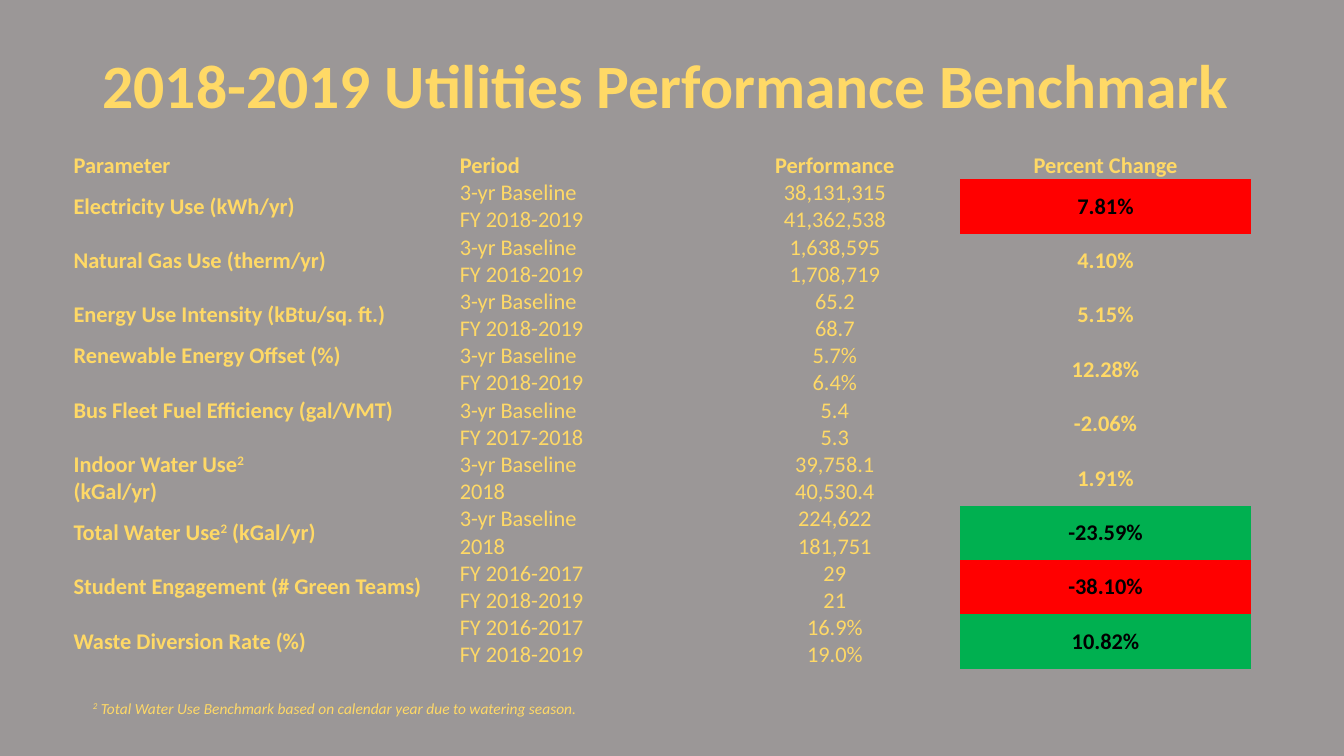
import pptx
import pptx.dml.color
import pptx.enum.text
import pptx.oxml.ns
import pptx.util

Inches = pptx.util.Inches
Pt = pptx.util.Pt
Color = pptx.dml.color.RGBColor
Align = pptx.enum.text.PP_ALIGN
Anchor = pptx.enum.text.MSO_ANCHOR

GRAY = Color(0x9B, 0x97, 0x97)
GOLD = Color(0xFF, 0xD9, 0x66)
BLACK = Color(0, 0, 0)
RED = Color(0xFF, 0, 0)
GREEN = Color(0, 0xB0, 0x50)

FACE = "Calibri"
PLAIN = "{2D5ABB26-0587-4C30-8999-92F81FD0307C}"
BASE = "3-yr Baseline"
FY17 = "FY 2016-2017"
FY18 = "FY 2017-2018"
FY19 = "FY 2018-2019"

HEADS = ["Parameter", "Period", "Performance", "Percent Change"]
ITEMS = [
    ("Electricity Use (kWh/yr)", BASE, "38,131,315", FY19, "41,362,538", "7.81%", RED),
    ("Natural Gas Use (therm/yr)", BASE, "1,638,595", FY19, "1,708,719", "4.10%", None),
    ("Energy Use Intensity (kBtu/sq. ft.)", BASE, "65.2", FY19, "68.7", "5.15%", None),
    ("Renewable Energy Offset (%)", BASE, "5.7%", FY19, "6.4%", "12.28%", None),
    ("Bus Fleet Fuel Efficiency (gal/VMT)", BASE, "5.4", FY18, "5.3", "-2.06%", None),
    ("Indoor Water Use^2^\v(kGal/yr)", BASE, "39,758.1", "2018", "40,530.4", "1.91%", None),
    ("Total Water Use^2^ (kGal/yr)", BASE, "224,622", "2018", "181,751", "-23.59%", GREEN),
    ("Student Engagement (# Green Teams)", FY17, "29", FY19, "21", "-38.10%", RED),
    ("Waste Diversion Rate (%)", FY17, "16.9%", FY19, "19.0%", "10.82%", GREEN),
]
TOP_SET = ("Renewable", "Bus Fleet")


def style(para, size, bold=False, color=GOLD, italic=False):
    font = para.font
    font.name = FACE
    font.size = Pt(size)
    font.bold = bold
    font.italic = italic
    font.color.rgb = color


def write(para, text):
    for index, part in enumerate(text.split("^")):
        for turn, line in enumerate(part.split("\v")):
            if turn:
                para.add_line_break()
            if line:
                run = para.add_run()
                run.text = line
                if index % 2:
                    run.font._element.set("baseline", "30000")


def fill_cell(cell, text, size=16, bold=False, align=Align.LEFT,
              anchor=Anchor.BOTTOM, fill=None, italic=False):
    para = cell.text_frame.paragraphs[0]
    write(para, text)
    para.alignment = align
    style(para, size, bold, BLACK if fill else GOLD, italic)
    cell.vertical_anchor = anchor
    if fill:
        cell.fill.solid()
        cell.fill.fore_color.rgb = fill


def add_grid(slide, left, top, widths, rows, height):
    frame = slide.shapes.add_table(
        rows, len(widths), Inches(left), Inches(top),
        Inches(sum(widths)), Inches(rows * height))
    table = frame.table
    table.first_row = False
    table.horz_banding = False
    table._tbl.tblPr.find(pptx.oxml.ns.qn("a:tableStyleId")).text = PLAIN
    for column, width in zip(table.columns, widths):
        column.width = Inches(width)
    for row in table.rows:
        row.height = Inches(height)
    for cell in table.iter_cells():
        cell.margin_left = cell.margin_right = 0
        cell.margin_top = cell.margin_bottom = 0
        cell.fill.background()
        style(cell.text_frame.paragraphs[0], 16)
    return table


def add_title(slide, left, top, width, height):
    box = slide.shapes.add_textbox(
        Inches(left), Inches(top), Inches(width), Inches(height))
    frame = box.text_frame
    frame.word_wrap = True
    frame.vertical_anchor = Anchor.MIDDLE
    para = frame.paragraphs[0]
    write(para, "2018-2019 Utilities Performance Benchmark")
    para.line_spacing = 0.9
    style(para, 44, True)


def add_marks(slide, left, top, widths, height):
    table = add_grid(slide, left, top, widths, 1 + 2 * len(ITEMS), height)
    sides = [Align.LEFT, Align.LEFT, Align.CENTER, Align.CENTER]
    for col, (head, side) in enumerate(zip(HEADS, sides)):
        fill_cell(table.cell(0, col), head, bold=True, align=side)
    for index, (name, then, old, now, new, change, fill) in enumerate(ITEMS):
        row = 1 + 2 * index
        for col in (0, 3):
            table.cell(row, col).merge(table.cell(row + 1, col))
        anchor = Anchor.TOP if name.startswith(TOP_SET) else Anchor.MIDDLE
        fill_cell(table.cell(row, 0), name, bold=True, anchor=anchor)
        fill_cell(table.cell(row, 3), change, bold=True, align=Align.CENTER,
                  anchor=Anchor.MIDDLE, fill=fill)
        for step, (time, value) in enumerate([(then, old), (now, new)]):
            fill_cell(table.cell(row + step, 1), time)
            fill_cell(table.cell(row + step, 2), value, align=Align.CENTER)


def add_note(slide, left, top, width, height):
    table = add_grid(slide, left, top, [width], 1, height)
    fill_cell(
        table.cell(0, 0),
        "^2^ Total Water Use Benchmark based on calendar year due to watering season.",
        size=11, italic=True)


def main():
    deck = pptx.Presentation()
    deck.slide_width = Inches(13.33)
    deck.slide_height = Inches(7.5)
    slide = deck.slides.add_slide(deck.slide_layouts[6])
    back = slide.background.fill
    back.solid()
    back.fore_color.rgb = GRAY
    add_title(slide, 0.92, 0.15, 11.5, 1.45)
    add_marks(slide, 0.73, 1.51, [3.83, 2.48, 2.48, 2.89], 0.27)
    add_note(slide, 0.92, 6.89, 10.7, 0.24)
    deck.save("out.pptx")


if __name__ == "__main__":
    main()
